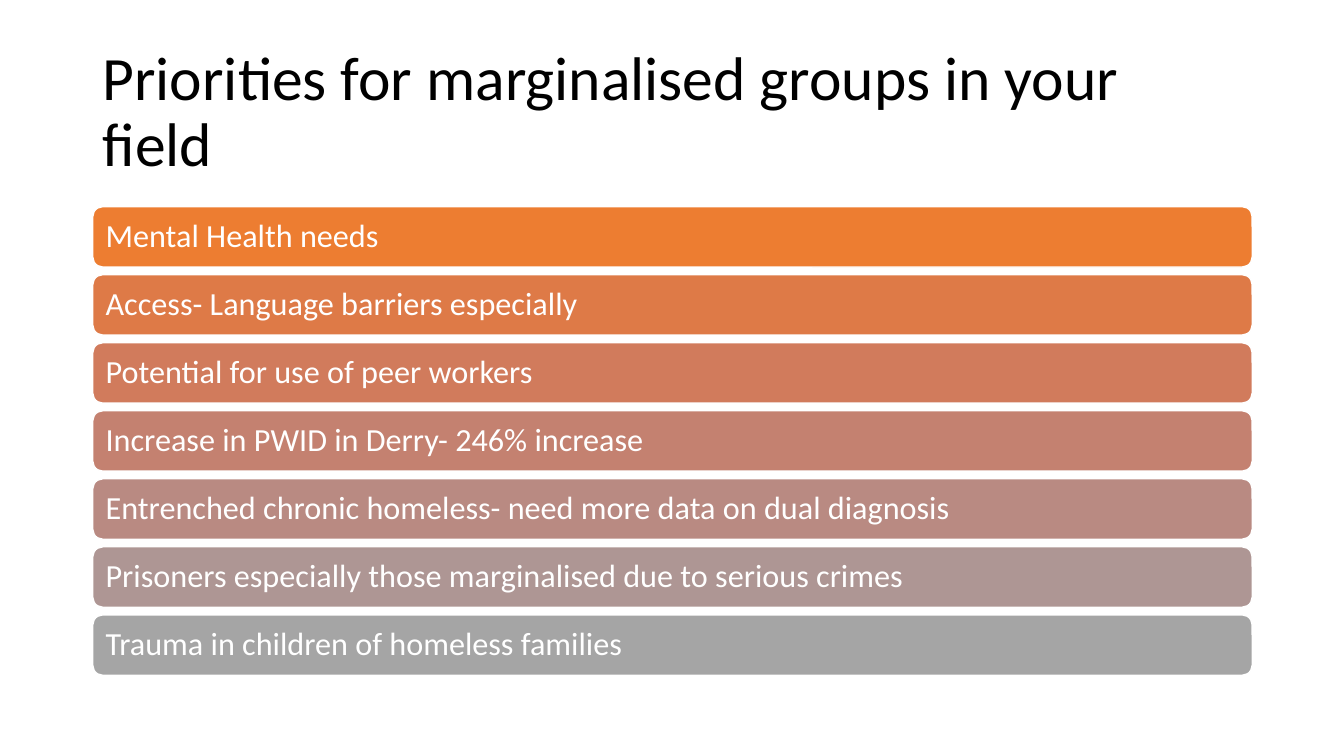
from pptx import Presentation
from pptx.dml.color import RGBColor
from pptx.enum.shapes import MSO_SHAPE
from pptx.enum.text import MSO_ANCHOR, PP_ALIGN
from pptx.util import Inches, Pt

WHITE = RGBColor(0xFF, 0xFF, 0xFF)
BLACK = RGBColor(0x00, 0x00, 0x00)

TITLE = "Priorities for marginalised groups in your field"
PRIORITIES = [
    ("Mental Health needs", RGBColor(0xED, 0x7D, 0x31)),
    ("Access- Language barriers especially", RGBColor(0xDE, 0x7A, 0x47)),
    ("Potential for use of peer workers", RGBColor(0xD1, 0x7B, 0x5C)),
    ("Increase in PWID in Derry- 246% increase", RGBColor(0xC4, 0x81, 0x70)),
    ("Entrenched chronic homeless- need more data on dual diagnosis", RGBColor(0xB9, 0x8A, 0x82)),
    ("Prisoners especially those marginalised due to serious crimes", RGBColor(0xAE, 0x96, 0x94)),
    ("Trauma in children of homeless families", RGBColor(0xA5, 0xA5, 0xA5)),
]

SLIDE_W, SLIDE_H = 13.33, 7.5
LEFT, WIDTH = 0.92, 11.5
TITLE_TOP, TITLE_H = 0.4, 1.45
FIRST_TOP, LAST_TOP, BAR_H = 2.05, 6.1, 0.6
PITCH = (LAST_TOP - FIRST_TOP) / (len(PRIORITIES) - 1)


def write(sp, text, size, color, inset_y):
    tf = sp.text_frame
    tf.word_wrap = True
    tf.vertical_anchor = MSO_ANCHOR.MIDDLE
    tf.margin_left = tf.margin_right = Inches(0.1)
    tf.margin_top = tf.margin_bottom = Inches(inset_y)
    p = tf.paragraphs[0]
    p.alignment = PP_ALIGN.LEFT
    p.line_spacing = 0.9
    r = p.add_run()
    r.text = text
    r.font.name = "Calibri"
    r.font.size = Pt(size)
    r.font.color.rgb = color


prs = Presentation()
prs.slide_width, prs.slide_height = Inches(SLIDE_W), Inches(SLIDE_H)
s = prs.slides.add_slide(prs.slide_layouts[6])

title = s.shapes.add_textbox(Inches(LEFT), Inches(TITLE_TOP), Inches(WIDTH), Inches(TITLE_H))
write(title, TITLE, size=44, color=BLACK, inset_y=0.05)

for row, (text, fill) in enumerate(PRIORITIES):
    bar = s.shapes.add_shape(
        MSO_SHAPE.ROUNDED_RECTANGLE,
        Inches(LEFT), Inches(FIRST_TOP + row * PITCH), Inches(WIDTH), Inches(BAR_H),
    )
    bar.shadow.inherit = False
    bar.fill.solid()
    bar.fill.fore_color.rgb = fill
    bar.line.color.rgb = WHITE
    bar.line.width = Pt(1)
    write(bar, text, size=23, color=WHITE, inset_y=0.1)

prs.save("out.pptx")
